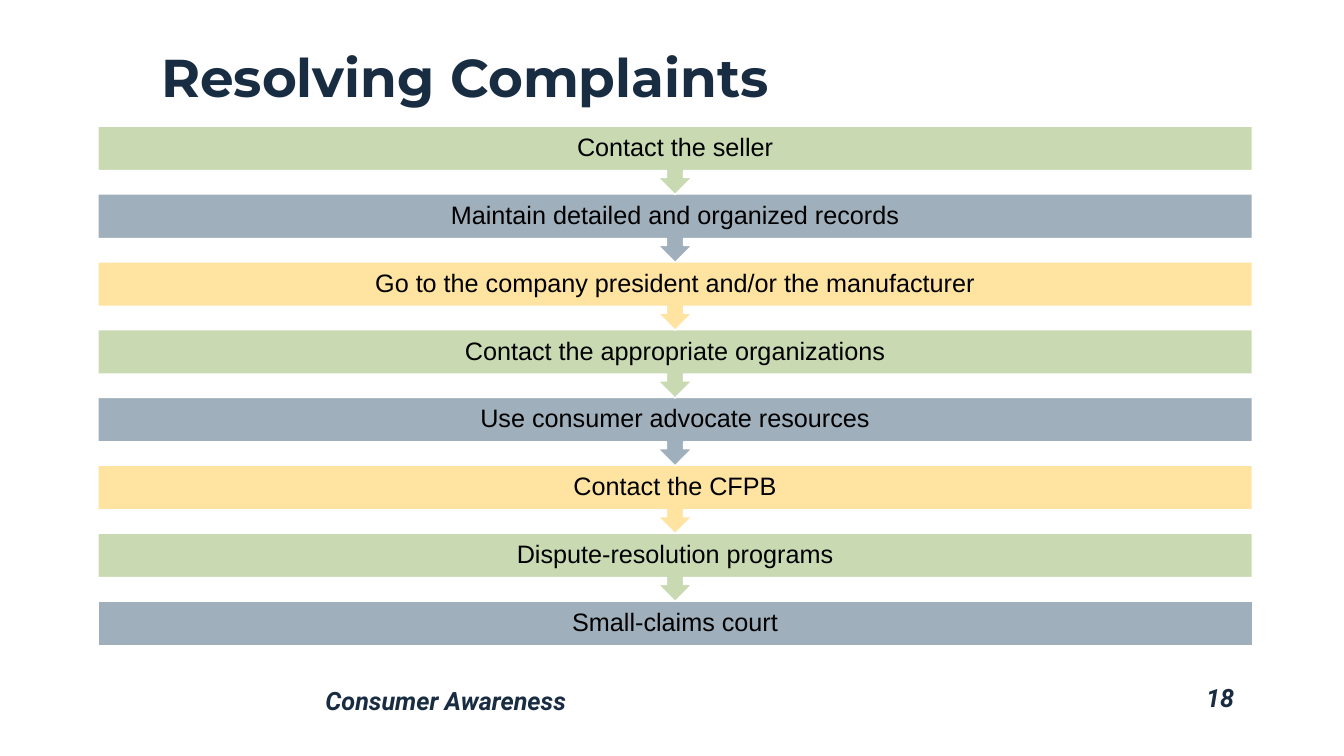
from pptx import Presentation
from pptx.dml.color import RGBColor
from pptx.enum.shapes import MSO_SHAPE
from pptx.enum.text import MSO_ANCHOR, PP_ALIGN
from pptx.util import Inches, Pt

TOP, MIDDLE, BOTTOM = MSO_ANCHOR.TOP, MSO_ANCHOR.MIDDLE, MSO_ANCHOR.BOTTOM
LEFT, CENTER, RIGHT = PP_ALIGN.LEFT, PP_ALIGN.CENTER, PP_ALIGN.RIGHT
RECT, CALLOUT = MSO_SHAPE.RECTANGLE, MSO_SHAPE.DOWN_ARROW_CALLOUT

NAVY, BLACK, WHITE = "182C42", "000000", "FFFFFF"
FILLS = ["C9DAB3", "9FAFBB", "FEE3A1"]
STEPS = [
    "Contact the seller",
    "Maintain detailed and organized records",
    "Go to the company president and/or the manufacturer",
    "Contact the appropriate organizations",
    "Use consumer advocate resources",
    "Contact the CFPB",
    "Dispute-resolution programs",
    "Small-claims court",
]


def color(code):
    return RGBColor.from_string(code)


class Deck:
    """Places elements on a grid of 100 columns by 100 rows."""

    def __init__(self, wide, high):
        self.prs = Presentation()
        self.prs.slide_width = Inches(wide)
        self.prs.slide_height = Inches(high)
        self.slide = self.prs.slides.add_slide(self.prs.slide_layouts[6])
        self.col = self.prs.slide_width / 100
        self.row = self.prs.slide_height / 100

    def place(self, box):
        left, top, wide, high = box
        return (round(left * self.col), round(top * self.row),
                round(wide * self.col), round(high * self.row))

    def label(self, frame, text, size, face, ink, align, anchor, strong=False):
        frame.word_wrap = True
        frame.vertical_anchor = anchor
        para = frame.paragraphs[0]
        para.alignment = align
        para.line_spacing = 0.9
        run = para.add_run()
        run.text = text
        font = run.font
        font.name, font.size, font.bold = face, Pt(size), strong
        font.color.rgb = color(ink)
        return run

    def title(self, text, box):
        area = self.slide.shapes.add_textbox(*self.place(box))
        self.label(area.text_frame, text, 38, "Montserrat", NAVY, LEFT, BOTTOM, True)

    def foot(self, text, box, align):
        area = self.slide.shapes.add_textbox(*self.place(box))
        run = self.label(area.text_frame, text, 18, "Roboto", NAVY, align, TOP, True)
        run.font.italic = True

    def step(self, kind, text, box, fill):
        bar = self.slide.shapes.add_shape(kind, *self.place(box))
        bar.shadow.inherit = False
        bar.fill.solid()
        bar.fill.fore_color.rgb = color(fill)
        bar.line.color.rgb = color(WHITE)
        bar.line.width = Pt(1)
        frame = bar.text_frame
        frame.margin_top = frame.margin_bottom = 0
        self.label(frame, text, 18, "Arial", BLACK, CENTER, MIDDLE)


def main():
    deck = Deck(13.33, 7.5)
    start, pitch, last = 16.7, 8.97, len(STEPS) - 1
    # Built from the bottom up, so each arrow tip lies over the next bar.
    for i in range(last, -1, -1):
        kind, high = (RECT, 5.87) if i == last else (CALLOUT, 9.05)
        box = (7.28, start + i * pitch, 85.9, high)
        deck.step(kind, STEPS[i], box, FILLS[i % len(FILLS)])
    deck.title("Resolving Complaints", (11.25, 1.47, 81.32, 13.6))
    deck.foot("Consumer Awareness", (23.48, 90.4, 57.24, 5.07), LEFT)
    deck.foot("18", (80.72, 90, 11.85, 5.07), RIGHT)
    deck.prs.save("out.pptx")


if __name__ == "__main__":
    main()
